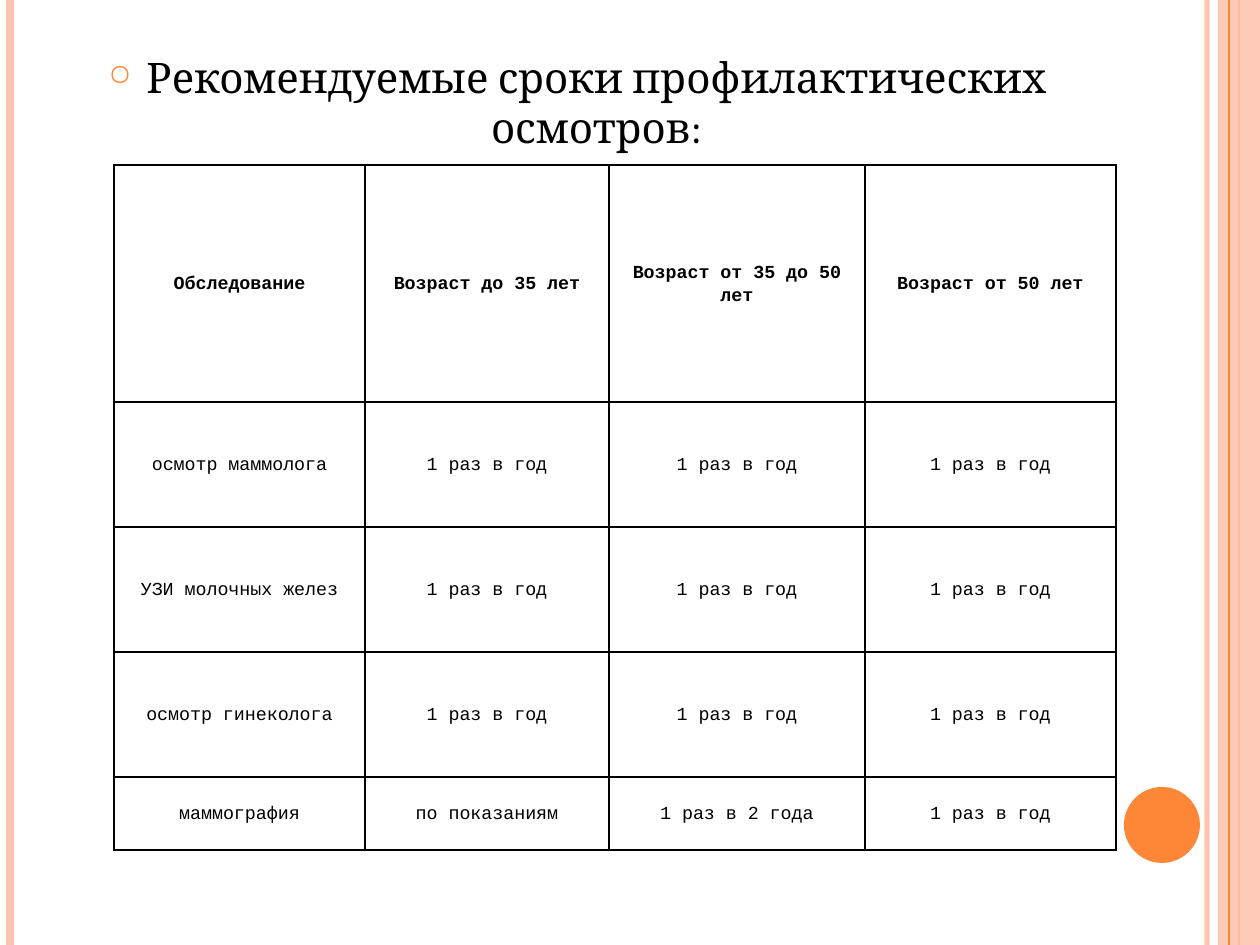
from lxml.etree import SubElement as Sub
from pptx import Presentation
from pptx.dml.color import RGBColor
from pptx.enum.shapes import MSO_CONNECTOR as Link, MSO_SHAPE as Form
from pptx.enum.text import MSO_ANCHOR as Anchor, PP_ALIGN as Align
from pptx.oxml.ns import qn
from pptx.util import Pt

SIZE = 1260, 945
PEACH, ORANGE, BLACK, WHITE = "FEC3AE", "FE8637", "000000", "FFFFFF"
TITLE = "Рекомендуемые сроки профилактических осмотров:"
YEAR = "1 раз в год"
ROWS = [
    ("Обследование", "Возраст до 35 лет", "Возраст от 35 до 50 лет", "Возраст от 50 лет"),
    ("осмотр маммолога", YEAR, YEAR, YEAR),
    ("УЗИ молочных желез", YEAR, YEAR, YEAR),
    ("осмотр гинеколога", YEAR, YEAR, YEAR),
    ("маммография", "по показаниям", "1 раз в 2 года", YEAR),
]
WIDTHS = [251, 244, 256, 251]
HEIGHTS = [237, 125, 125, 125, 73]
BACK = [(1207, PEACH, 3, 93), (10, PEACH, 4.5, 100), (1239, ORANGE, 1.5, 100)]
FRONT = [(1229, ORANGE, 0.75, 100)]
SHAPES = [
    (Form.RECTANGLE, (1218, 0, 42, 945), PEACH, 87),
    (Form.OVAL, (1124, 787, 76, 76), ORANGE, 100),
]
HEAD = {"size": Pt(24), "name": "Cambria"}
CELL = {"size": Pt(10.5), "name": "Courier New"}
PAD = {"margin_left": 11, "margin_right": 11, "margin_top": 5, "margin_bottom": 5}


def px(num):
    """Turn pixels into EMU."""
    return round(num * 914400 / 126)


def rgb(code):
    """Turn a hex string into a colour."""
    return RGBColor.from_string(code)


def apply(obj, form):
    """Set each format value on an object."""
    for key, val in form.items():
        setattr(obj, key, val)


def paint(fill, code, alpha=100):
    """Fill with a colour, see-through below 100."""
    fill.solid()
    fill.fore_color.rgb = rgb(code)
    if alpha < 100:
        tone = fill._xPr.find(qn("a:solidFill"))[0]
        Sub(tone, qn("a:alpha"), val=str(alpha * 1000))


def write(para, text, form, **more):
    """Put centred text in a paragraph."""
    apply(para, {"alignment": Align.CENTER, **more})
    run = para.add_run()
    run.text = text
    apply(run.font, form)
    run.font.color.rgb = rgb(BLACK)


def stripes(slide, lines):
    """Draw full-height vertical lines."""
    for x, code, width, alpha in lines:
        line = slide.shapes.add_connector(Link.STRAIGHT, px(x), 0, px(x), px(SIZE[1]))
        line.line.width = Pt(width)
        paint(line.line.fill, code, alpha)
        Sub(line._element.spPr, qn("a:effectLst"))


def shapes(slide):
    """Draw the side band and the disc."""
    for form, box, code, alpha in SHAPES:
        shape = slide.shapes.add_shape(form, *map(px, box))
        shape.shadow.inherit = False
        shape.line.fill.background()
        paint(shape.fill, code, alpha)
        if form == Form.RECTANGLE:
            stripes(slide, FRONT)


def title(slide):
    """Write the bulleted title."""
    frame = slide.shapes.add_textbox(*map(px, (63, 45, 1029, 847))).text_frame
    frame.word_wrap = True
    para = frame.paragraphs[0]
    write(para, TITLE, HEAD, space_before=Pt(6))
    prop = para._p.get_or_add_pPr()
    prop.set("marL", str(px(38)))
    prop.set("indent", str(px(-38)))
    Sub(Sub(prop, qn("a:buClr")), qn("a:srgbClr"), val=ORANGE)
    Sub(prop, qn("a:buSzPct"), val="70000")
    Sub(prop, qn("a:buChar"), char="○")


def border(cell):
    """Give a cell four thin black edges."""
    prop = cell._tc.get_or_add_tcPr()
    for side in "LRTB":
        edge = Sub(prop, qn("a:ln" + side), w=str(Pt(1)))
        Sub(Sub(edge, qn("a:solidFill")), qn("a:srgbClr"), val=BLACK)


def table(slide):
    """Build the table of check-ups."""
    box = 114, 165, sum(WIDTHS), sum(HEIGHTS)
    grid = slide.shapes.add_table(len(ROWS), len(WIDTHS), *map(px, box)).table
    apply(grid, {"first_row": False, "horz_banding": False})
    for col, width in zip(grid.columns, WIDTHS):
        col.width = px(width)
    for i, (row, height, texts) in enumerate(zip(grid.rows, HEIGHTS, ROWS)):
        row.height = px(height)
        for cell, text in zip(row.cells, texts):
            apply(cell, {key: px(val) for key, val in PAD.items()})
            cell.vertical_anchor = Anchor.MIDDLE
            border(cell)
            paint(cell.fill, WHITE)
            para = cell.text_frame.paragraphs[0]
            write(para, text, {**CELL, "bold": i == 0}, line_spacing=1.15)


def main():
    """Build and save the slide."""
    deck = Presentation()
    deck.slide_width, deck.slide_height = map(px, SIZE)
    slide = deck.slides.add_slide(deck.slide_layouts[6])
    paint(slide.background.fill, WHITE)
    stripes(slide, BACK)
    shapes(slide)
    title(slide)
    table(slide)
    deck.save("out.pptx")


if __name__ == "__main__":
    main()
